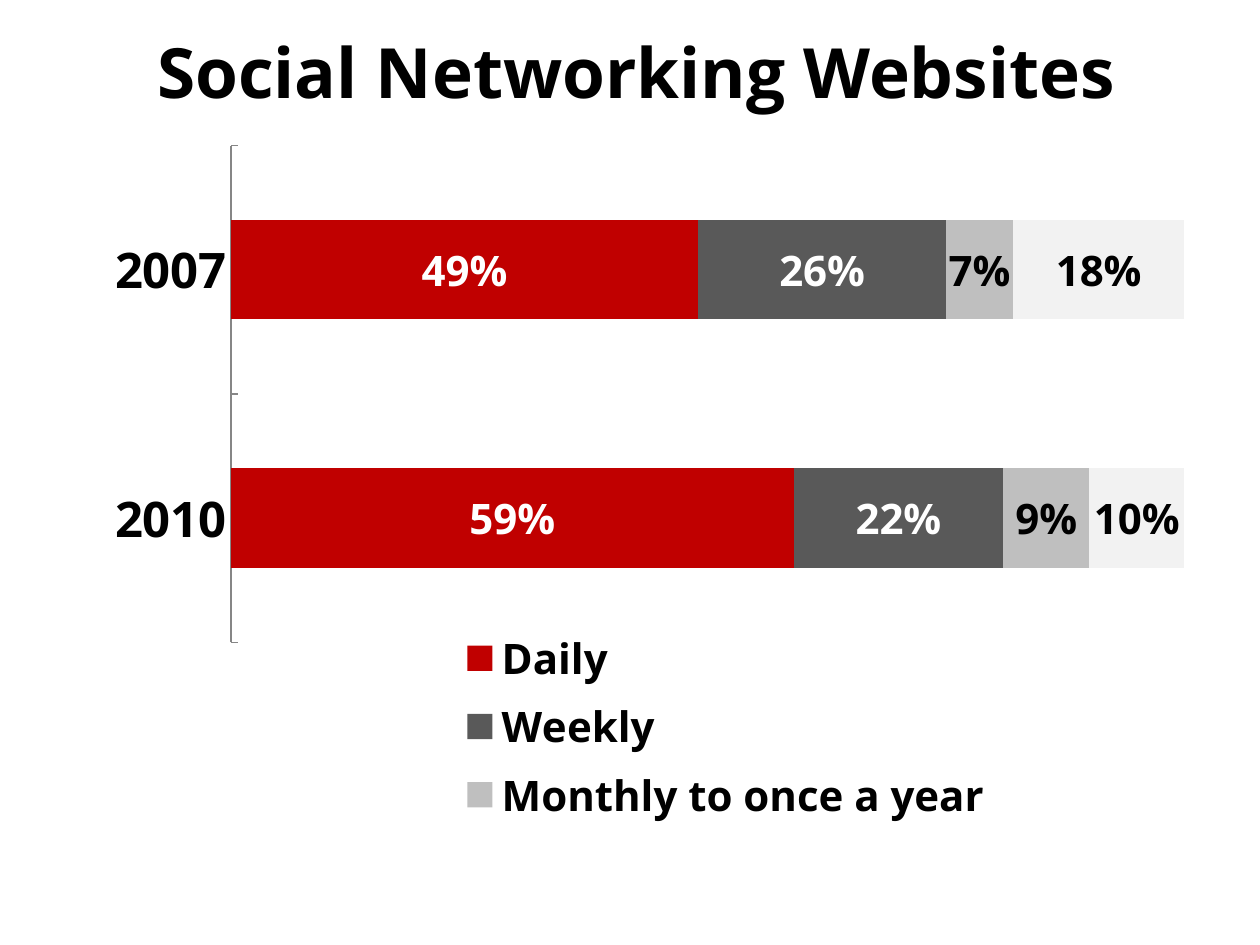
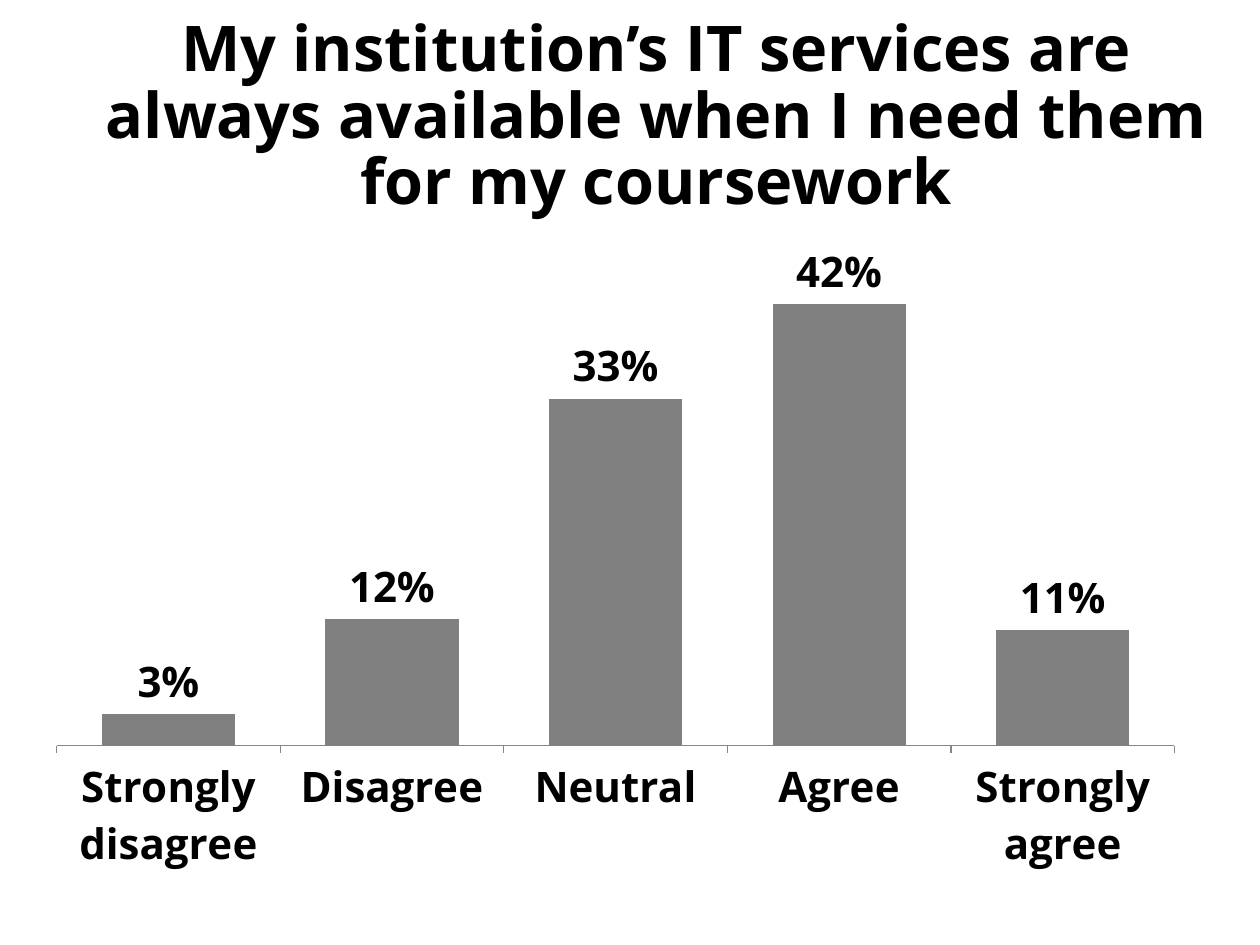
from dataclasses import dataclass

from lxml import etree
from pptx import Presentation
from pptx.chart.data import CategoryChartData
from pptx.dml.color import RGBColor as RGB
from pptx.enum.chart import (
    XL_CHART_TYPE as CHART,
    XL_LABEL_POSITION as LABEL,
    XL_LEGEND_POSITION as LEGEND,
    XL_TICK_LABEL_POSITION as TICK_LABEL,
    XL_TICK_MARK as TICK,
)
from pptx.enum.text import MSO_ANCHOR as ANCHOR, PP_ALIGN as ALIGN
from pptx.oxml.ns import qn
from pptx.util import Inches, Pt


@dataclass(frozen=True)
class Theme:
    font: str = "Open Sans"
    text: str = "000000"
    light_text: str = "FFFFFF"
    axis: str = "868686"
    daily: str = "C00000"
    weekly: str = "595959"
    monthly: str = "BFBFBF"
    never: str = "F2F2F2"
    column: str = "808080"
    title_size: float = 39.6
    long_title_size: float = 36
    chart_size: float = 24
    year_size: float = 28


THEME = Theme()

# Name, values for 2010 and 2007, bar colour, label colour
FREQUENCIES = [
    ("Daily", (0.59, 0.49), THEME.daily, THEME.light_text),
    ("Weekly", (0.22, 0.26), THEME.weekly, THEME.light_text),
    ("Monthly to once a year", (0.09, 0.07), THEME.monthly, THEME.text),
    ("Never", (0.10, 0.18), THEME.never, THEME.text),
]
OPINIONS = {
    "Strongly\ndisagree": 0.03,
    "Disagree": 0.12,
    "Neutral": 0.33,
    "Agree": 0.42,
    "Strongly\nagree": 0.11,
}


def style_font(font, size, color=THEME.text):
    font.name = THEME.font
    font.size = Pt(size)
    font.bold = True
    font.color.rgb = RGB.from_string(color)


def add_title(slide, text, box, size, line_spacing=None):
    tf = slide.shapes.add_textbox(*map(Inches, box)).text_frame
    tf.word_wrap = True
    tf.vertical_anchor = ANCHOR.MIDDLE
    tf.text = text
    p = tf.paragraphs[0]
    p.alignment = ALIGN.CENTER
    p.line_spacing = line_spacing
    style_font(p.runs[0].font, size)


def set_layout(parent, box, inner=False):
    """Place a plot area or legend by fractions of the chart's size."""
    layout = parent.find(qn("c:layout"))
    if layout is None:
        layout = etree.Element(qn("c:layout"))
        # The layout opens a plot area, but follows a legend's entries
        after = parent.findall(qn("c:legendPos")) + parent.findall(qn("c:legendEntry"))
        parent.insert(len(after), layout)
    for child in list(layout):
        layout.remove(child)
    manual = etree.SubElement(layout, qn("c:manualLayout"))
    settings = [("layoutTarget", "inner")] if inner else []
    settings += [("xMode", "edge"), ("yMode", "edge"), *zip("xywh", box)]
    for tag, val in settings:
        etree.SubElement(manual, qn(f"c:{tag}")).set("val", str(val))


def add_bar_chart(slide, kind, box, plot_box, categories, series, top, gap, tick):
    """Add a percentage chart with a hidden value axis."""
    data = CategoryChartData(number_format="0%")
    data.categories = categories
    for name, values in series:
        data.add_series(name, values)
    chart = slide.shapes.add_chart(kind, *map(Inches, box), data).chart
    chart.has_title = False
    chart.has_legend = False
    style_font(chart.font, THEME.chart_size)

    value_axis = chart.value_axis
    value_axis.minimum_scale, value_axis.maximum_scale = 0, top
    value_axis.has_major_gridlines = False
    value_axis.visible = False
    axis = chart.category_axis
    axis.major_tick_mark = tick
    axis.minor_tick_mark = TICK.NONE
    axis.tick_label_position = TICK_LABEL.NEXT_TO_AXIS
    axis.format.line.color.rgb = RGB.from_string(THEME.axis)
    axis.format.line.width = Pt(0.75)

    plot = chart.plots[0]
    plot.gap_width = gap
    plot.vary_by_categories = False
    set_layout(chart._chartSpace.chart.plotArea, plot_box, inner=True)
    return chart


def style_series(series, color, label_color, position):
    series.format.fill.solid()
    series.format.fill.fore_color.rgb = RGB.from_string(color)
    labels = series.data_labels
    labels.show_value = True
    labels.number_format = "0%"
    labels.number_format_is_linked = False
    labels.position = position
    style_font(labels.font, THEME.chart_size, label_color)


def add_legend(chart, box, hidden_index):
    """Add a legend without one entry; stacked bars count entries from the last series."""
    chart.has_legend = True
    legend = chart.legend
    legend.position = LEGEND.BOTTOM
    legend.include_in_layout = False
    style_font(legend.font, THEME.chart_size)
    entry = etree.Element(qn("c:legendEntry"))
    etree.SubElement(entry, qn("c:idx")).set("val", str(hidden_index))
    etree.SubElement(entry, qn("c:delete")).set("val", "1")
    legend._element.find(qn("c:legendPos")).addnext(entry)
    set_layout(legend._element, box)


def add_networking_slide(slide):
    add_title(slide, "Social Networking Websites",
              (0.26, 0.17, 9.58, 0.78), THEME.title_size)
    chart = add_bar_chart(
        slide, CHART.BAR_STACKED, (0.32, 0.52, 9.46, 6.36), (0.16, 0.1, 0.8, 0.62),
        ["2010", "2007"], [row[:2] for row in FREQUENCIES],
        top=1, gap=150, tick=TICK.INSIDE)
    chart.plots[0].overlap = 100
    style_font(chart.category_axis.tick_labels.font, THEME.year_size)
    for series, (_, _, color, label_color) in zip(chart.series, FREQUENCIES):
        style_series(series, color, label_color, LABEL.CENTER)
    add_legend(chart, (0.35, 0.69, 0.45, 0.27), hidden_index=0)


def add_availability_slide(slide):
    add_title(slide, "My institution’s IT services are always available "
              "when I need them for my coursework",
              (0.42, 0.42, 9.58, 1.03), THEME.long_title_size, Pt(38))
    chart = add_bar_chart(
        slide, CHART.COLUMN_CLUSTERED, (0.06, 1.34, 9.75, 5.87), (0.04, 0.14, 0.91, 0.64),
        list(OPINIONS), [("Series 1", list(OPINIONS.values()))],
        top=0.45, gap=68, tick=TICK.OUTSIDE)
    style_series(chart.series[0], THEME.column, THEME.text, LABEL.OUTSIDE_END)


def main():
    prs = Presentation()
    prs.slide_width, prs.slide_height = Inches(10), Inches(7.5)
    blank = prs.slide_layouts[6]
    for fill_slide in (add_networking_slide, add_availability_slide):
        fill_slide(prs.slides.add_slide(blank))
    prs.save("out.pptx")


if __name__ == "__main__":
    main()
